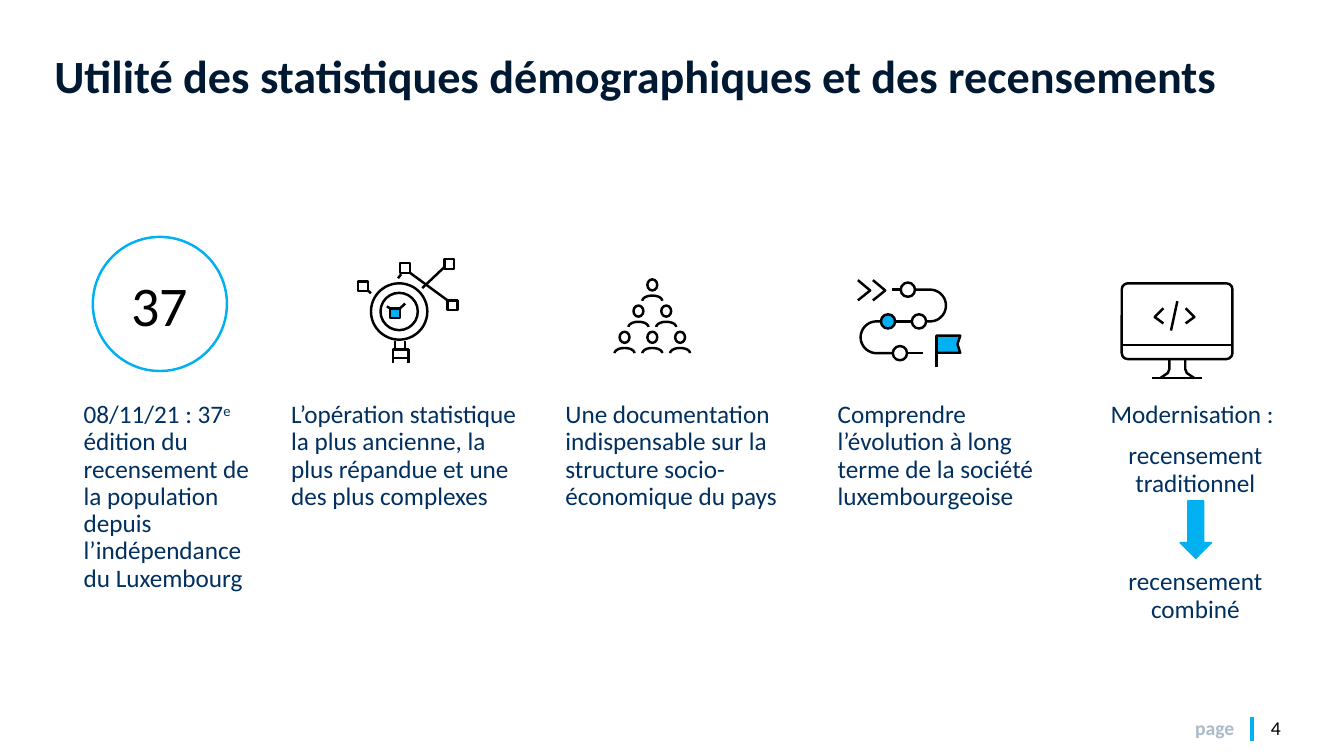
from dataclasses import dataclass
from math import cos, pi, sin

from lxml.etree import SubElement
from pptx import Presentation
from pptx.dml.color import RGBColor
from pptx.enum.shapes import MSO_CONNECTOR, MSO_SHAPE
from pptx.enum.text import MSO_ANCHOR, MSO_AUTO_SIZE, PP_ALIGN
from pptx.oxml.ns import qn
from pptx.util import Cm, Pt


@dataclass(frozen=True)
class Theme:
    font: str = "Calibri"
    title: RGBColor = RGBColor(0x00, 0x19, 0x32)
    body: RGBColor = RGBColor(0x00, 0x30, 0x60)
    blue: RGBColor = RGBColor(0x00, 0xB0, 0xF0)
    black: RGBColor = RGBColor(0x00, 0x00, 0x00)
    white: RGBColor = RGBColor(0xFF, 0xFF, 0xFF)
    grey: RGBColor = RGBColor(0xAB, 0xBA, 0xC9)
    title_size: int = 33
    body_size: int = 18
    page_size: int = 14
    badge_size: int = 40
    thin: float = 1.75
    thick: float = 2.25


THEME = Theme()
TITLE = "Utilité des statistiques démographiques et des recensements"
BODY_TOP = 10.13
NOTES = [
    (2.11, 4.27, ["08/11/21 : 37", "e", " édition du recensement de la population "
                  "depuis l’indépendance du Luxembourg"]),
    (7.34, 5.84, ["L’opération statistique la plus ancienne, la plus répandue "
                  "et une des plus complexes"]),
    (14.25, 5.84, ["Une documentation indispensable sur la structure "
                   "socio-économique du pays"]),
    (21.11, 5.84, ["Comprendre l’évolution à long terme de la société "
                   "luxembourgeoise"]),
]
STEPS = [("recensement traditionnel", 10), ("recensement combiné", 51)]


def add_run(para, text, size, color, bold=False):
    run = para.add_run()
    run.text = text
    font = run.font
    font.name, font.size, font.bold = THEME.font, Pt(size), bold
    font.color.rgb = color
    return run


def set_frame(frame, anchor=MSO_ANCHOR.TOP):
    frame.word_wrap = True
    frame.auto_size = MSO_AUTO_SIZE.NONE
    frame.vertical_anchor = anchor
    frame.margin_left = frame.margin_right = 0
    frame.margin_top = frame.margin_bottom = 0


def add_box(shapes, left, top, width, height):
    frame = shapes.add_textbox(Cm(left), Cm(top), Cm(width), Cm(height)).text_frame
    set_frame(frame)
    frame.paragraphs[0].line_spacing = 0.9
    return frame


def paint(shape, fill=None, line=THEME.black, weight=THEME.thin):
    shape.shadow.inherit = False
    if fill is None:
        shape.fill.background()
    else:
        shape.fill.solid()
        shape.fill.fore_color.rgb = fill
    shape.line.color.rgb = line
    shape.line.width = Pt(weight)


def add_form(shapes, kind, left, top, width, height, fill=None, **style):
    shape = shapes.add_shape(kind, Cm(left), Cm(top), Cm(width), Cm(height))
    paint(shape, fill, **style)
    return shape


def add_line(shapes, x1, y1, x2, y2, color=THEME.black, weight=THEME.thin):
    line = shapes.add_connector(MSO_CONNECTOR.STRAIGHT, Cm(x1), Cm(y1), Cm(x2), Cm(y2))
    line.line.color.rgb = color
    line.line.width = Pt(weight)
    SubElement(line._element.spPr, qn("a:effectLst"))


def add_path(shapes, points, fill=None, close=False):
    spots = [(Cm(x), Cm(y)) for x, y in points]
    pen = shapes.build_freeform(*spots[0])
    pen.add_line_segments(spots[1:], close=close)
    paint(pen.convert_to_shape(), fill)


def arc(x, y, rx, ry, start, sweep=pi, steps=24):
    """Points on an ellipse round (x, y), clockwise on screen for a positive sweep."""
    angles = [start + sweep * i / steps for i in range(steps + 1)]
    return [(x + rx * cos(a), y + ry * sin(a)) for a in angles]


def add_title(slide):
    title = slide.shapes.title
    title.left, title.top = Cm(1.37), Cm(0.43)
    title.width, title.height = Cm(31.06), Cm(3.1)
    set_frame(title.text_frame, MSO_ANCHOR.MIDDLE)
    para = title.text_frame.paragraphs[0]
    para.alignment, para.line_spacing = PP_ALIGN.LEFT, 0.9
    add_run(para, TITLE, THEME.title_size, THEME.title, True)


def add_notes(shapes):
    for left, width, parts in NOTES:
        para = add_box(shapes, left, BODY_TOP, width, 5.49).paragraphs[0]
        for part in parts:
            run = add_run(para, part, THEME.body_size, THEME.body)
            if part == "e":
                run.font._element.set("baseline", "30000")


def add_steps(shapes):
    frame = add_box(shapes, 27.99, BODY_TOP, 4.27, 5.49)
    add_run(frame.paragraphs[0], "Modernisation :", THEME.body_size, THEME.body)
    for text, gap in STEPS:
        para = frame.add_paragraph()
        para.alignment, para.line_spacing = PP_ALIGN.CENTER, 0.9
        para.space_before = Pt(gap)
        add_run(para, text, THEME.body_size, THEME.body)
    add_form(shapes, MSO_SHAPE.DOWN_ARROW, 29.74, 12.62, 0.79, 1.45,
             THEME.blue, line=THEME.blue, weight=1)


def add_badge(shapes):
    badge = add_form(shapes, MSO_SHAPE.OVAL, 2.34, 5.97, 3.38, 3.38,
                     THEME.white, line=THEME.blue)
    badge.text_frame.vertical_anchor = MSO_ANCHOR.MIDDLE
    para = badge.text_frame.paragraphs[0]
    para.alignment = PP_ALIGN.CENTER
    add_run(para, "37", THEME.badge_size, THEME.black)


def add_lens(shapes):
    for size in (1.42, 0.94):
        add_form(shapes, MSO_SHAPE.OVAL, 10.06 - size / 2, 7.85 - size / 2, size, size)
    add_path(shapes, [(9.91, 9.14), (9.91, 8.81), (10.29, 8.81), (10.29, 9.14)])
    for ends in [(9.91, 9.02, 10.29, 9.02), (9.96, 8.59, 9.96, 8.81),
                 (10.21, 8.59, 10.21, 8.81), (10.64, 7.26, 11.2, 6.73),
                 (10.08, 7.77, 10.21, 7.65), (10.34, 6.88, 11.28, 7.57),
                 (9.75, 7.72, 9.83, 7.77), (9.27, 7.32, 9.35, 7.39),
                 (10.03, 7.01, 10.11, 6.91)]:
        add_line(shapes, *ends)
    for left, top, fill in [(10.08, 6.63, None), (11.28, 7.57, None), (11.2, 6.53, None),
                            (9.83, 7.77, THEME.blue), (9.02, 7.09, None)]:
        add_form(shapes, MSO_SHAPE.RECTANGLE, left, top, 0.25, 0.25, fill)


def add_crowd(shapes):
    for row in range(3):
        top = 7.04 + 0.66 * row
        for col in range(row + 1):
            mid = 16.44 + 0.7 * (col - row / 2)
            add_form(shapes, MSO_SHAPE.OVAL, mid - 0.125, top, 0.25, 0.28)
            add_path(shapes, arc(mid, top + 0.54, 0.25, 0.13, pi))


def add_road(shapes):
    rows = high, mid, low = 7.3, 8.1, 8.9
    add_path(shapes, [(22.2, mid), *arc(22.09, 8.5, 0.4, 0.4, -pi / 2, -pi), (22.5, low)])
    add_path(shapes, [(23.04, high), *arc(23.44, 7.7, 0.4, 0.4, -pi / 2), (23.34, mid)])
    for y, x1, x2 in zip(rows, (22.48, 22.53, 22.83), (22.71, 22.99, 23.27)):
        add_line(shapes, x1, y, x2, y)
    for x, y, fill in [(22.88, high, None), (22.38, mid, THEME.blue),
                       (23.16, mid, None), (22.68, low, None)]:
        add_form(shapes, MSO_SHAPE.OVAL, x - 0.18, y - 0.18, 0.36, 0.36, fill)
    add_path(shapes, [(23.6, 8.89), (24.2, 8.89), (24.13, 8.67), (24.2, 8.46),
                      (23.6, 8.46)], THEME.blue, True)
    add_line(shapes, 23.6, 8.46, 23.6, 9.25)
    for x in (21.62, 22):
        add_path(shapes, [(x, 7.06), (x + 0.31, 7.32), (x, 7.57)])


def add_screen(shapes):
    frame = add_form(shapes, MSO_SHAPE.ROUNDED_RECTANGLE, 28.27, 7.14, 2.79, 1.91)
    frame.adjustments[0] = 0.08
    for ends in [(28.27, 8.69, 31.06, 8.69), (29.67, 7.59, 29.51, 8.33),
                 (29.03, 9.53, 30.3, 9.53)]:
        add_line(shapes, *ends)
    mark = [(0.28, 7.77), (0.5, 7.99), (0.28, 8.15)]
    leg = [(0.2, 9.04), (0.2, 9.3), (0.24, 9.4), (0.43, 9.53)]
    for side in (-1, 1):
        for mid, points in ((29.6, mark), (29.67, leg)):
            add_path(shapes, [(mid + side * x, y) for x, y in points])


def add_page(shapes):
    for left, width, text, color, bold in [(30.12, 1.3, "page", THEME.grey, True),
                                           (32.03, 0.8, "4", THEME.black, False)]:
        para = add_box(shapes, left, 18.03, width, 0.6).paragraphs[0]
        para.line_spacing = 1.0
        add_run(para, text, THEME.page_size, color, bold)
    add_line(shapes, 31.55, 18.06, 31.55, 18.67, THEME.blue, THEME.thick)


def main():
    deck = Presentation()
    deck.slide_width, deck.slide_height = Cm(33.87), Cm(19.05)
    slide = deck.slides.add_slide(deck.slide_layouts[5])
    add_title(slide)
    for draw in (add_page, add_notes, add_badge, add_steps):
        draw(slide.shapes)
    for draw in (add_lens, add_crowd, add_road, add_screen):
        draw(slide.shapes.add_group_shape().shapes)
    deck.save("out.pptx")


if __name__ == "__main__":
    main()
